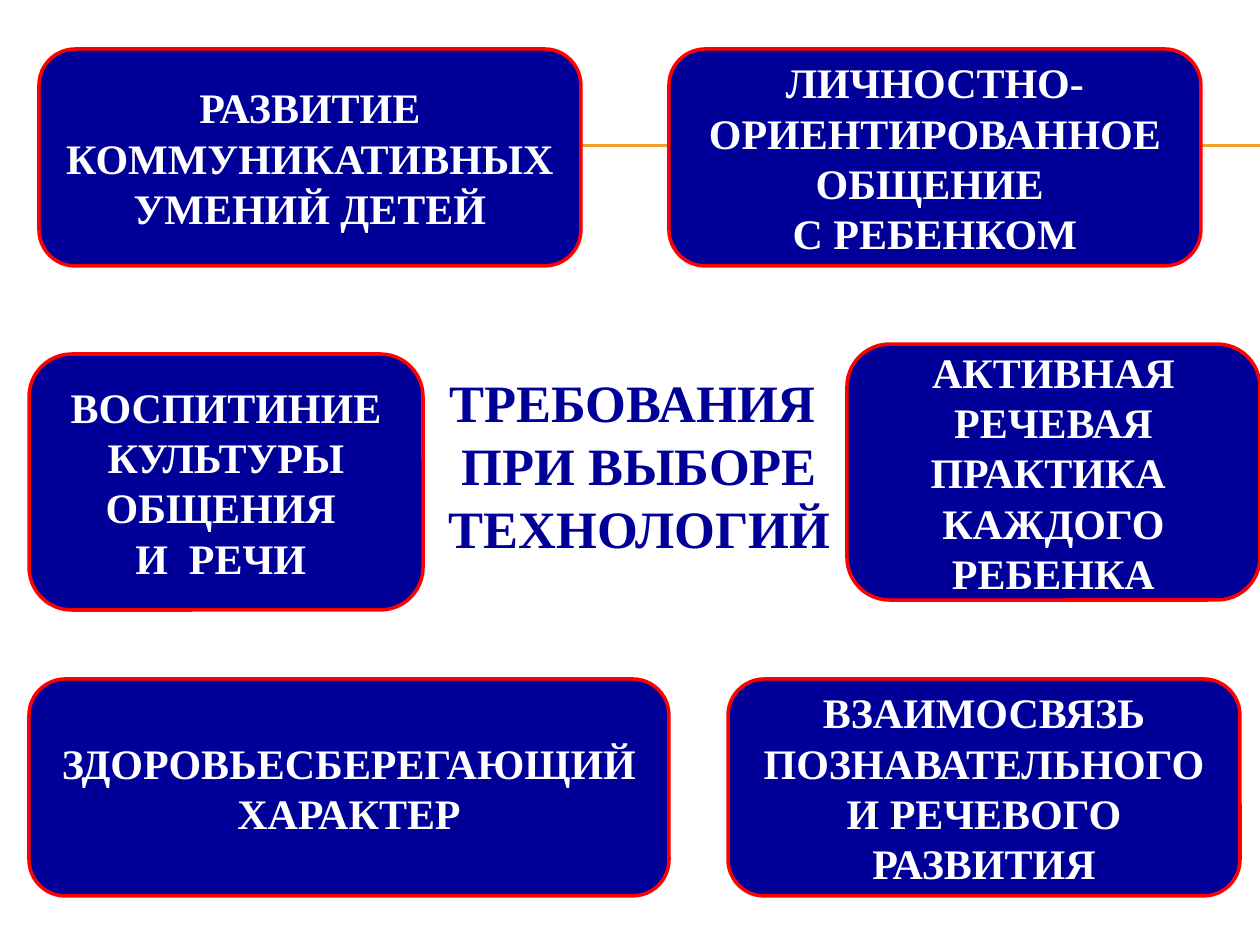
from dataclasses import dataclass

from lxml.etree import SubElement
from pptx import Presentation
from pptx.dml.color import RGBColor
from pptx.enum.shapes import MSO_CONNECTOR, MSO_SHAPE
from pptx.enum.text import MSO_ANCHOR, MSO_AUTO_SIZE, PP_ALIGN
from pptx.oxml.ns import qn
from pptx.util import Emu, Pt

PX_PER_INCH = 126
PAGE_WIDTH, PAGE_HEIGHT = 1260, 945


def px(length):
    return Emu(round(length * 914400 / PX_PER_INCH))


@dataclass(frozen=True)
class Theme:
    navy: RGBColor = RGBColor(0x00, 0x00, 0x99)
    red: RGBColor = RGBColor(0xFF, 0x00, 0x00)
    white: RGBColor = RGBColor(0xFF, 0xFF, 0xFF)
    amber: RGBColor = RGBColor(0xF0, 0xA2, 0x2E)
    font: str = "Times New Roman"
    card_size: int = 24
    title_size: int = 30
    border: float = 2
    rule: float = 0.75


class SlideBuilder:
    def __init__(self, page, theme):
        self.page = page
        self.theme = theme

    def add_lines(self, frame, lines, size, color):
        frame.word_wrap = True
        style = {"name": self.theme.font, "size": Pt(size), "bold": True}
        for index, line in enumerate(lines):
            para = frame.add_paragraph() if index else frame.paragraphs[0]
            para.alignment = PP_ALIGN.CENTER
            span = para.add_run()
            span.text = line
            for key, value in style.items():
                setattr(span.font, key, value)
            span.font.color.rgb = color

    def rule(self, left, right, y):
        line = self.page.shapes.add_connector(
            MSO_CONNECTOR.STRAIGHT, px(left), px(y), px(right), px(y))
        line.line.color.rgb = self.theme.amber
        line.line.width = Pt(self.theme.rule)
        SubElement(line._element.spPr, qn("a:effectLst"))

    def card(self, place, lines):
        box = self.page.shapes.add_shape(
            MSO_SHAPE.ROUNDED_RECTANGLE, *map(px, place))
        box.shadow.inherit = False
        box.fill.solid()
        box.fill.fore_color.rgb = self.theme.navy
        box.line.color.rgb = self.theme.red
        box.line.width = Pt(self.theme.border)
        box.text_frame.vertical_anchor = MSO_ANCHOR.MIDDLE
        self.add_lines(box.text_frame, lines,
                       self.theme.card_size, self.theme.white)

    def title(self, place, lines):
        box = self.page.shapes.add_textbox(*map(px, place))
        box.text_frame.auto_size = MSO_AUTO_SIZE.SHAPE_TO_FIT_TEXT
        self.add_lines(box.text_frame, lines,
                       self.theme.title_size, self.theme.navy)


# Outer rows share a top and a height; the middle cards share a height
TOP_ROW, BOTTOM_ROW = 49, 679
OUTER_HEIGHT, MIDDLE_HEIGHT = 217, 256

CARDS = [
    ((39, TOP_ROW, 542, OUTER_HEIGHT),
     ["РАЗВИТИЕ КОММУНИКАТИВНЫХ УМЕНИЙ ДЕТЕЙ"]),
    ((29, 354, 394, MIDDLE_HEIGHT),
     ["ВОСПИТИНИЕ КУЛЬТУРЫ ОБЩЕНИЯ ", "И  РЕЧИ "]),
    ((29, BOTTOM_ROW, 640, OUTER_HEIGHT),
     ["ЗДОРОВЬЕСБЕРЕГАЮЩИЙ ХАРАКТЕР"]),
    ((669, TOP_ROW, 532, OUTER_HEIGHT),
     ["ЛИЧНОСТНО-ОРИЕНТИРОВАННОЕ ОБЩЕНИЕ ", "С РЕБЕНКОМ"]),
    ((847, 344, 413, MIDDLE_HEIGHT),
     ["АКТИВНАЯ РЕЧЕВАЯ ПРАКТИКА  КАЖДОГО РЕБЕНКА"]),
    ((728, BOTTOM_ROW, 512, OUTER_HEIGHT),
     ["ВЗАИМОСВЯЗЬ ПОЗНАВАТЕЛЬНОГО И РЕЧЕВОГО РАЗВИТИЯ"]),
]


def main():
    deck = Presentation()
    deck.slide_width, deck.slide_height = px(PAGE_WIDTH), px(PAGE_HEIGHT)
    page = deck.slides.add_slide(deck.slide_layouts[6])
    builder = SlideBuilder(page, Theme())

    # Double rule behind the top row
    for y in (145, 146):
        builder.rule(71, PAGE_WIDTH, y)

    # Requirements around the centre
    for place, lines in CARDS:
        builder.card(place, lines)

    # Central heading
    builder.title((433, 364, 413, 204),
                  ["ТРЕБОВАНИЯ ", "ПРИ ВЫБОРЕ", "ТЕХНОЛОГИЙ"])

    deck.save("out.pptx")


if __name__ == "__main__":
    main()
